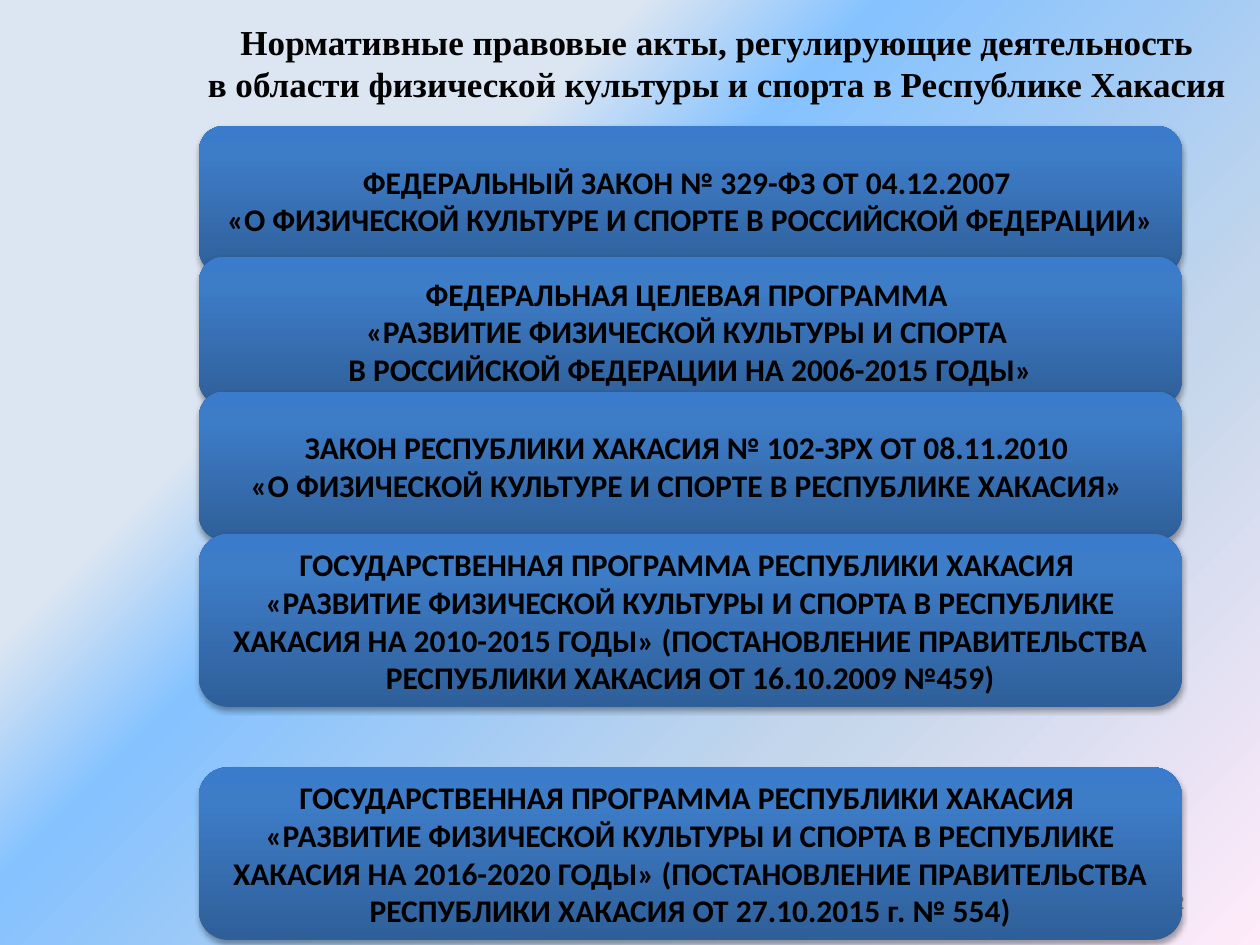
from lxml import etree
from pptx import Presentation
from pptx.dml.color import RGBColor
from pptx.enum import shapes, text
from pptx.oxml import ns
from pptx.util import Inches, Pt

THEME = {
    "title": {"name": "Times New Roman", "size": Pt(20), "bold": True, "color": "000000"},
    "card": {"name": "Calibri", "size": Pt(18), "bold": True, "color": "000000"},
    "number": {"name": "Calibri", "size": Pt(12), "bold": False, "color": "8C8C8C"},
    "back": [(29, "DCE6F2", 60), (40, "85C2FF", 100), (70, "C4D6EB", 100), (100, "FFEBFA", 100)],
    "blue": [(0, "2F5F99", 100), (80, "3D7CC7", 100), (100, "3A7CCB", 100)],
    "shadow": "000000",
}


def set_gradient(fill, element, stops, angle):
    fill.gradient()
    grad = element.xpath(".//a:gradFill")[0]
    for child in list(grad):
        grad.remove(child)
    lst = etree.SubElement(grad, ns.qn("a:gsLst"))
    for pos, color, alpha in stops:
        gs = etree.SubElement(lst, ns.qn("a:gs"), pos=str(pos * 1000))
        clr = etree.SubElement(gs, ns.qn("a:srgbClr"), val=color)
        if alpha < 100:
            etree.SubElement(clr, ns.qn("a:alpha"), val=str(alpha * 1000))
    etree.SubElement(grad, ns.qn("a:lin"), ang=str(angle * 60000), scaled="0")


def write(sp, lines, style, align, anchor):
    tf = sp.text_frame
    tf.word_wrap = True
    tf.vertical_anchor = anchor
    for i, line in enumerate(lines):
        p = tf.paragraphs[0] if i == 0 else tf.add_paragraph()
        p.alignment = align
        r = p.add_run()
        r.text = line
        for key, value in THEME[style].items():
            if key == "color":
                r.font.color.rgb = RGBColor.from_string(value)
            else:
                setattr(r.font, key, value)


prs = Presentation()
prs.slide_width, prs.slide_height = Inches(10), Inches(7.5)
s = prs.slides.add_slide(prs.slide_layouts[6])
set_gradient(s.background.fill, s.element, THEME["back"], 45)

CENTER, RIGHT = text.PP_ALIGN.CENTER, text.PP_ALIGN.RIGHT
TOP, MIDDLE = text.MSO_ANCHOR.TOP, text.MSO_ANCHOR.MIDDLE

number = s.shapes.add_textbox(Inches(7.17), Inches(6.95), Inches(2.33), Inches(0.4))
write(number, ["2"], "number", RIGHT, MIDDLE)

title = s.shapes.add_textbox(Inches(1.38), Inches(0.11), Inches(8.62), Inches(0.77))
write(title, [
    "Нормативные правовые акты, регулирующие деятельность",
    "в области физической культуры и спорта в Республике Хакасия",
], "title", CENTER, TOP)
title.text_frame.auto_size = text.MSO_AUTO_SIZE.SHAPE_TO_FIT_TEXT

state_program = "ГОСУДАРСТВЕННАЯ ПРОГРАММА РЕСПУБЛИКИ ХАКАСИЯ "
state_details = (
    "«РАЗВИТИЕ ФИЗИЧЕСКОЙ КУЛЬТУРЫ И СПОРТА В РЕСПУБЛИКЕ ХАКАСИЯ НА {} ГОДЫ» "
    "(ПОСТАНОВЛЕНИЕ ПРАВИТЕЛЬСТВА РЕСПУБЛИКИ ХАКАСИЯ ОТ {})"
)
acts = [
    (1, 1.18, ["ФЕДЕРАЛЬНЫЙ ЗАКОН № 329-ФЗ ОТ 04.12.2007 ",
               "«О ФИЗИЧЕСКОЙ КУЛЬТУРЕ И СПОРТЕ В РОССИЙСКОЙ ФЕДЕРАЦИИ»"]),
    (2.04, 1.18, ["ФЕДЕРАЛЬНАЯ ЦЕЛЕВАЯ ПРОГРАММА ",
                  "«РАЗВИТИЕ ФИЗИЧЕСКОЙ КУЛЬТУРЫ И СПОРТА ",
                  "В РОССИЙСКОЙ ФЕДЕРАЦИИ НА 2006-2015 ГОДЫ»"]),
    (3.11, 1.18, ["ЗАКОН РЕСПУБЛИКИ ХАКАСИЯ № 102-ЗРХ ОТ 08.11.2010 ",
                  "«О ФИЗИЧЕСКОЙ КУЛЬТУРЕ И СПОРТЕ В РЕСПУБЛИКЕ ХАКАСИЯ» "]),
    (4.24, 1.37, [state_program, state_details.format("2010-2015", "16.10.2009 №459")]),
    (6.09, 1.37, [state_program, state_details.format("2016-2020", "27.10.2015 г. № 554")]),
]
for top, height, lines in acts:
    sp = s.shapes.add_shape(shapes.MSO_SHAPE.ROUNDED_RECTANGLE,
                            Inches(1.58), Inches(top), Inches(7.8), Inches(height))
    set_gradient(sp.fill, sp.element, THEME["blue"], 270)
    sp.line.fill.background()
    sp.shadow.inherit = False
    effects = sp.element.spPr.find(ns.qn("a:effectLst"))
    shadow = etree.SubElement(effects, ns.qn("a:outerShdw"), blurRad=str(Pt(3.1)),
                              dist=str(Pt(1.8)), dir="5400000", rotWithShape="0")
    clr = etree.SubElement(shadow, ns.qn("a:srgbClr"), val=THEME["shadow"])
    etree.SubElement(clr, ns.qn("a:alpha"), val="35000")
    write(sp, lines, "card", CENTER, MIDDLE)

prs.save("out.pptx")
